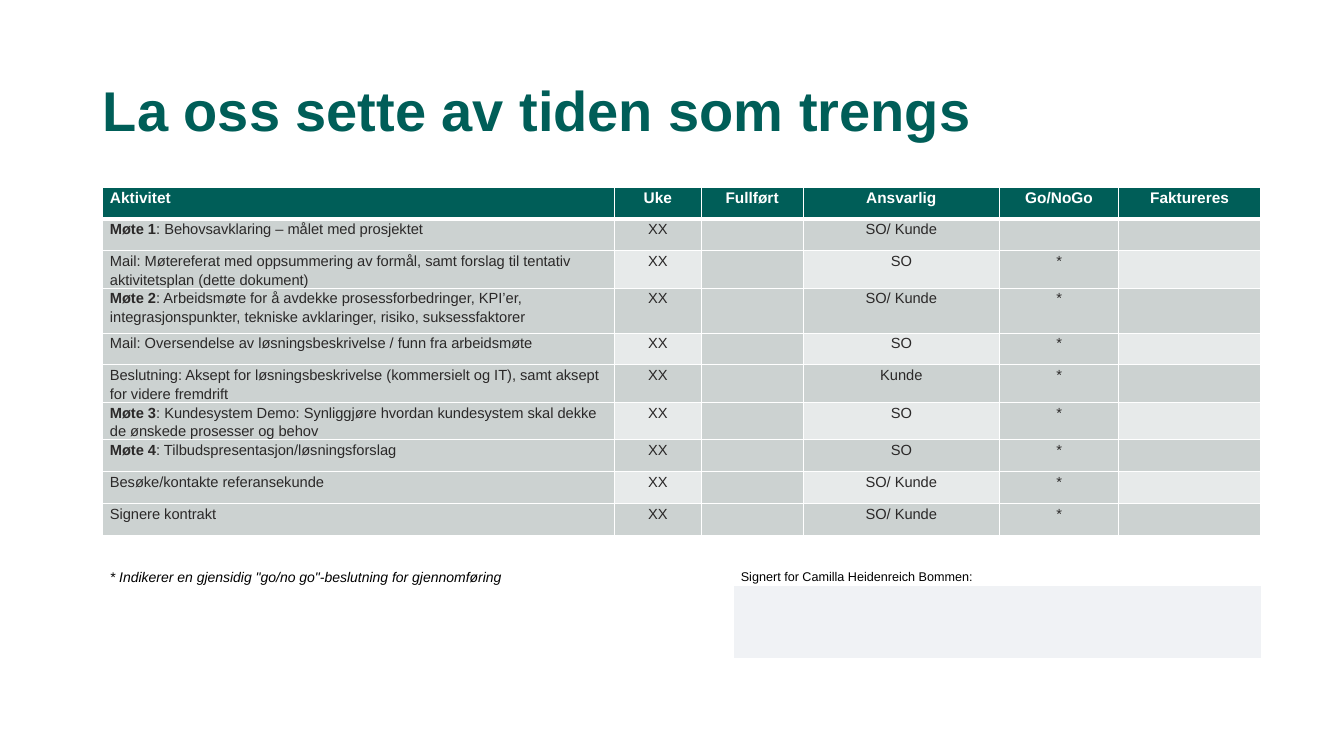
from lxml import etree
from pptx import Presentation
from pptx.dml.color import RGBColor
from pptx.enum.text import MSO_ANCHOR, PP_ALIGN
from pptx.oxml.ns import qn
from pptx.util import Cm, Pt

LEFT, CENTER = PP_ALIGN.LEFT, PP_ALIGN.CENTER
TOP, MIDDLE = MSO_ANCHOR.TOP, MSO_ANCHOR.MIDDLE

FONT = "Arial"
GREEN, WHITE, BLACK, INK = "005E58", "FFFFFF", "000000", "2B2929"
BAND, LIGHT_BAND, SIGN_FIELD = "CCD2D1", "E7EAEA", "F0F2F5"

HEADING = "La oss sette av tiden som trengs"
COLUMNS = [("Aktivitet", 12.9), ("Uke", 2.18), ("Fullført", 2.57),
           ("Ansvarlig", 4.95), ("Go/NoGo", 3.0), ("Faktureres", 3.58)]
ACTIVITIES = [
    ("Møte 1", ": Behovsavklaring – målet med prosjektet", "SO/ Kunde", ""),
    ("", "Mail: Møtereferat med oppsummering av formål, samt forslag til "
     "tentativ aktivitetsplan (dette dokument)", "SO", "*"),
    ("Møte 2", ": Arbeidsmøte for å avdekke prosessforbedringer, KPI’er, "
     "integrasjonspunkter, tekniske avklaringer, risiko, suksessfaktorer", "SO/ Kunde", "*"),
    ("", "Mail: Oversendelse av løsningsbeskrivelse / funn fra arbeidsmøte", "SO", "*"),
    ("", "Beslutning: Aksept for løsningsbeskrivelse (kommersielt og IT), "
     "samt aksept for videre fremdrift", "Kunde", "*"),
    ("Møte 3", ": Kundesystem Demo: Synliggjøre hvordan kundesystem skal "
     "dekke de ønskede prosesser og behov", "SO", "*"),
    ("Møte 4", ": Tilbudspresentasjon/løsningsforslag", "SO", "*"),
    ("", "Besøke/kontakte referansekunde", "SO/ Kunde", "*"),
    ("", "Signere kontrakt", "SO/ Kunde", "*"),
]
WEEK = "XX"
FOOTNOTE = "* Indikerer en gjensidig \"go/no go\"-beslutning for gjennomføring"
SIGNATURE = "Signert for Camilla Heidenreich Bommen:"
PLAN_HEIGHTS = [0.8, 0.8, 0.8, 1.13] + [0.8] * 6
SIGN_WIDTHS, SIGN_HEIGHTS = [13.2, 2.7, 13.3], [0.28, 1.83]
TABLE_LEFT, PLAN_TOP, SIGN_TOP = 2.59, 4.72, 14.3


def color(value):
    return RGBColor.from_string(value)


def add_run(paragraph, text, size, ink, bold=False, italic=False):
    run = paragraph.add_run()
    run.text = text
    run.font.name = FONT
    run.font.size = Pt(size)
    run.font.color.rgb = color(ink)
    run.font.bold = bold
    run.font.italic = italic


def add_grid(slide, top, widths, heights):
    grid = slide.shapes.add_table(len(heights), len(widths), Cm(TABLE_LEFT), Cm(top),
                                  Cm(sum(widths)), Cm(sum(heights))).table
    grid.horz_banding = False
    for column, width in zip(grid.columns, widths):
        column.width = Cm(width)
    for row, height in zip(grid.rows, heights):
        row.height = Cm(height)
    return grid


def set_borders(cell, bottom):
    properties = cell._tc.get_or_add_tcPr()
    for tag, width in (("lnL", 1), ("lnR", 1), ("lnT", 1), ("lnB", bottom)):
        line = etree.SubElement(properties, qn("a:" + tag), w=str(Pt(width)))
        fill = etree.SubElement(line, qn("a:solidFill"))
        etree.SubElement(fill, qn("a:srgbClr"), val=WHITE)


def fill_cell(cell, parts, size, ink, fill=None, align=LEFT, after=0, italic=False):
    cell.margin_left = cell.margin_right = Cm(0.18)
    cell.margin_top = cell.margin_bottom = 0
    cell.vertical_anchor = TOP
    if fill:
        cell.fill.solid()
        cell.fill.fore_color.rgb = color(fill)
    else:
        cell.fill.background()
    paragraph = cell.text_frame.paragraphs[0]
    paragraph.alignment = align
    paragraph.line_spacing = 1.15
    paragraph.space_after = Pt(after)
    written = [(text, bold) for text, bold in parts if text]
    for text, bold in written:
        add_run(paragraph, text, size, ink, bold, italic)
    if not written:
        end = etree.SubElement(paragraph._p, qn("a:endParaRPr"))
        end.set("sz", str(int(size * 100)))


def add_plan(slide):
    plan = add_grid(slide, PLAN_TOP, [width for _, width in COLUMNS], PLAN_HEIGHTS)
    rows = [[[(label, True)] for label, _ in COLUMNS]]
    for meeting, activity, owner, decision in ACTIVITIES:
        rows.append([[(meeting, True), (activity, False)]]
                    + [[(text, False)] for text in (WEEK, "", owner, decision, "")])
    for r, row in enumerate(rows):
        for c, parts in enumerate(row):
            cell = plan.cell(r, c)
            header = r == 0
            light = r % 2 == 0 and c % 2 == 1
            set_borders(cell, 3 if header else 1)
            fill_cell(cell, parts, 11 if header else 10.5, WHITE if header else INK,
                      GREEN if header else LIGHT_BAND if light else BAND,
                      CENTER if c else LEFT, 3)


def add_signature(slide):
    sign = add_grid(slide, SIGN_TOP, SIGN_WIDTHS, SIGN_HEIGHTS)
    sign.first_row = False
    rows = [[(FOOTNOTE, 10, None), ("", 9, None), (SIGNATURE, 9, None)],
            [("", 9, None), ("", 9, WHITE), ("", 9, SIGN_FIELD)]]
    for r, row in enumerate(rows):
        for c, (text, size, fill) in enumerate(row):
            fill_cell(sign.cell(r, c), [(text, False)], size, BLACK, fill,
                      italic=text == FOOTNOTE)


def main():
    deck = Presentation()
    deck.slide_width, deck.slide_height = Cm(33.87), Cm(19.05)
    slide = deck.slides.add_slide(deck.slide_layouts[5])
    heading = slide.shapes.title
    heading.left, heading.top = Cm(2.34), Cm(1.68)
    heading.width, heading.height = Cm(29.21), Cm(2.36)
    heading.text_frame.vertical_anchor = MIDDLE
    paragraph = heading.text_frame.paragraphs[0]
    paragraph.alignment = LEFT
    paragraph.line_spacing = 0.9
    add_run(paragraph, HEADING, 40, GREEN, bold=True)
    add_plan(slide)
    add_signature(slide)
    deck.save("out.pptx")


if __name__ == "__main__":
    main()
